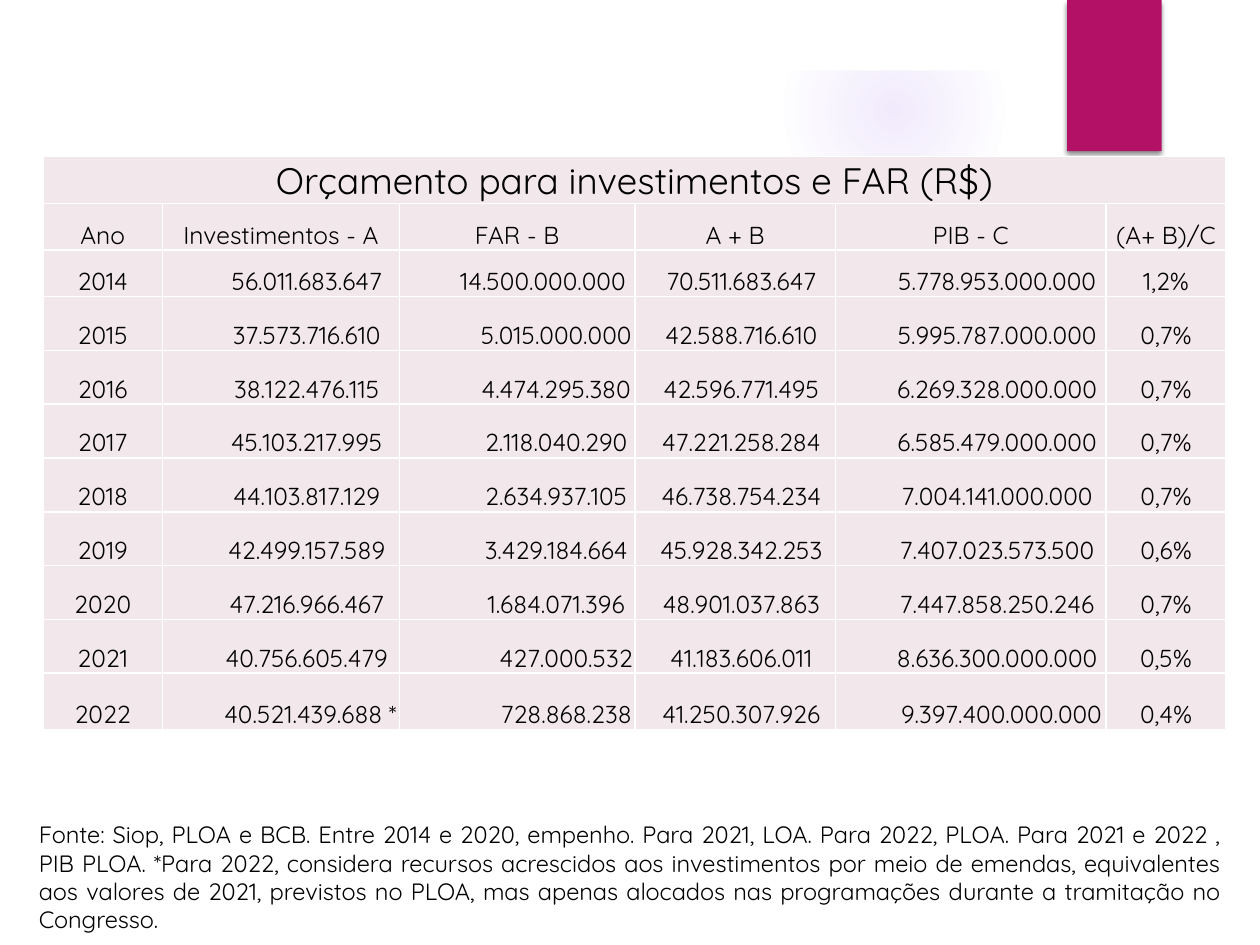
from lxml import etree
from pptx import Presentation
from pptx.dml.color import RGBColor
from pptx.enum import shapes, text
from pptx.oxml.ns import nsdecls
from pptx.util import Inches, Pt

WHITE = RGBColor(0xFF, 0xFF, 0xFF)
BLACK = RGBColor(0, 0, 0)
MAGENTA = RGBColor(0xB3, 0x11, 0x66)
PALE_PINK = RGBColor(0xF2, 0xE7, 0xEA)
LILAC = RGBColor(0x9B, 0x6B, 0xF2)
FONT = "Quicksand"
A_NS = nsdecls("a")


def add_run(paragraph, words, size):
    run = paragraph.add_run()
    run.text = words
    run.font.name = FONT
    run.font.size = Pt(size)
    run.font.color.rgb = BLACK


def fill_cell(cell, words, size, indent=0):
    """Centre the words at the foot of a white-bordered cell, shifted right by the indent."""
    cell.vertical_anchor = text.MSO_ANCHOR.BOTTOM
    cell.margin_left = Inches(0.01 + indent)
    cell.margin_right = cell.margin_top = Inches(0.01)
    cell.margin_bottom = 0
    properties = cell._tc.get_or_add_tcPr()
    for side in "LRTB":
        properties.append(etree.fromstring(
            f'<a:ln{side} {A_NS} w="12700"><a:solidFill><a:srgbClr val="{WHITE}"/>'
            f'</a:solidFill></a:ln{side}>'))
    cell.fill.solid()
    cell.fill.fore_color.rgb = PALE_PINK
    paragraph = cell.text_frame.paragraphs[0]
    paragraph.alignment = text.PP_ALIGN.CENTER
    add_run(paragraph, words, size)


prs = Presentation()
prs.slide_width, prs.slide_height = Inches(10), Inches(7.5)
slide = prs.slides.add_slide(prs.slide_layouts[6])

# Soft glow behind the white frame
glow = slide.shapes.add_shape(
    shapes.MSO_SHAPE.OVAL, Inches(6.22), 0, Inches(1.75), Inches(1.75))
glow.shadow.inherit = False
glow.line.fill.background()
stops = "".join(
    f'<a:gs pos="{position * 1000}"><a:srgbClr val="{LILAC}">'
    f'<a:alpha val="{opacity * 1000}"/></a:srgbClr></a:gs>'
    for position, opacity in ((0, 14), (36, 7), (73, 0)))
glow._element.spPr.find("{*}prstGeom").addnext(etree.fromstring(
    f'<a:gradFill {A_NS}><a:gsLst>{stops}</a:gsLst><a:path path="circle">'
    '<a:fillToRect l="50000" t="50000" r="50000" b="50000"/></a:path></a:gradFill>'))

# Frame drawn in hundredths of an inch, with its window as a second contour
outline = slide.shapes.build_freeform(0, 0, scale=Inches(0.01))
outline.add_line_segments([(0, 750), (1000, 750), (1000, 0)])
outline.move_to(945, 695)
outline.add_line_segments([(945, 56), (56, 56), (56, 695)])
frame = outline.convert_to_shape()
frame.shadow.inherit = False
frame.fill.solid()
frame.fill.fore_color.rgb = WHITE
frame.line.fill.background()

ribbon = slide.shapes.add_shape(
    shapes.MSO_SHAPE.RECTANGLE, Inches(8.47), 0, Inches(0.75), Inches(1.2))
ribbon.shadow.inherit = False
ribbon.fill.solid()
ribbon.fill.fore_color.rgb = MAGENTA
ribbon.line.fill.background()
ribbon._element.spPr.find("{*}effectLst").append(etree.fromstring(
    f'<a:outerShdw {A_NS} blurRad="{Pt(3)}" dist="{Pt(2)}" dir="5400000" rotWithShape="0">'
    f'<a:srgbClr val="{BLACK}"><a:alpha val="45000"/></a:srgbClr></a:outerShdw>'))

# Budget table
headings = ["Ano", "Investimentos - A", "FAR - B", "A + B", "PIB - C", "(A+ B)/C"]
budget = [
    ["2014", "56.011.683.647", "14.500.000.000", "70.511.683.647", "5.778.953.000.000", "1,2%"],
    ["2015", "37.573.716.610", "5.015.000.000", "42.588.716.610", "5.995.787.000.000", "0,7%"],
    ["2016", "38.122.476.115", "4.474.295.380", "42.596.771.495", "6.269.328.000.000", "0,7%"],
    ["2017", "45.103.217.995", "2.118.040.290", "47.221.258.284", "6.585.479.000.000", "0,7%"],
    ["2018", "44.103.817.129", "2.634.937.105", "46.738.754.234", "7.004.141.000.000", "0,7%"],
    ["2019", "42.499.157.589", "3.429.184.664", "45.928.342.253", "7.407.023.573.500", "0,6%"],
    ["2020", "47.216.966.467", "1.684.071.396", "48.901.037.863", "7.447.858.250.246", "0,7%"],
    ["2021", "40.756.605.479", "427.000.532", "41.183.606.011", "8.636.300.000.000", "0,5%"],
    ["2022", "40.521.439.688 *", "728.868.238", "41.250.307.926", "9.397.400.000.000", "0,4%"],
]
column_widths = [0.95, 1.88, 1.87, 1.59, 2.15, 0.95]
row_heights = [0.37] * 3 + [2.99 / 7] * 7 + [0.45]
column_indents = [0, 0.41, 0.41, 0.1, 0.42, 0]
far_indents = {13: 0.62, 11: 0.78}  # shorter FAR amounts sit further right
last_year_indents = {"Investimentos - A": 0.47, "PIB - C": 0.49}

table = slide.shapes.add_table(
    len(row_heights), len(column_widths), Inches(0.34), Inches(1.24),
    Inches(sum(column_widths)), Inches(sum(row_heights))).table
for column, width in zip(table.columns, column_widths):
    column.width = Inches(width)
for row, height in zip(table.rows, row_heights):
    row.height = Inches(height)

table.cell(0, 0).merge(table.cell(0, len(headings) - 1))
fill_cell(table.cell(0, 0), "Orçamento para investimentos e FAR (R$)", 21)
for c, heading in enumerate(headings):
    fill_cell(table.cell(1, c), heading, 14)
for r, year in enumerate(budget, start=2):
    for c, amount in enumerate(year):
        indent = column_indents[c]
        if headings[c] == "FAR - B":
            indent = far_indents.get(len(amount), indent)
        elif year[0] == "2022":
            indent = last_year_indents.get(headings[c], indent)
        fill_cell(table.cell(r, c), amount, 14, indent)

source_note = slide.shapes.add_textbox(
    Inches(0.21), Inches(6.46), Inches(9.58), Inches(1.01)).text_frame
source_note.word_wrap = True
source_note.auto_size = text.MSO_AUTO_SIZE.SHAPE_TO_FIT_TEXT
source_note.paragraphs[0].alignment = text.PP_ALIGN.JUSTIFY
add_run(
    source_note.paragraphs[0],
    "Fonte: Siop, PLOA e BCB. Entre 2014 e 2020, empenho. Para 2021, LOA. Para 2022, PLOA. "
    "Para 2021 e 2022 , PIB PLOA. *Para 2022, considera recursos acrescidos aos investimentos "
    "por meio de emendas, equivalentes aos valores de 2021, previstos no PLOA, mas apenas "
    "alocados nas programações durante a tramitação no Congresso.", 13.5)

prs.save("out.pptx")
